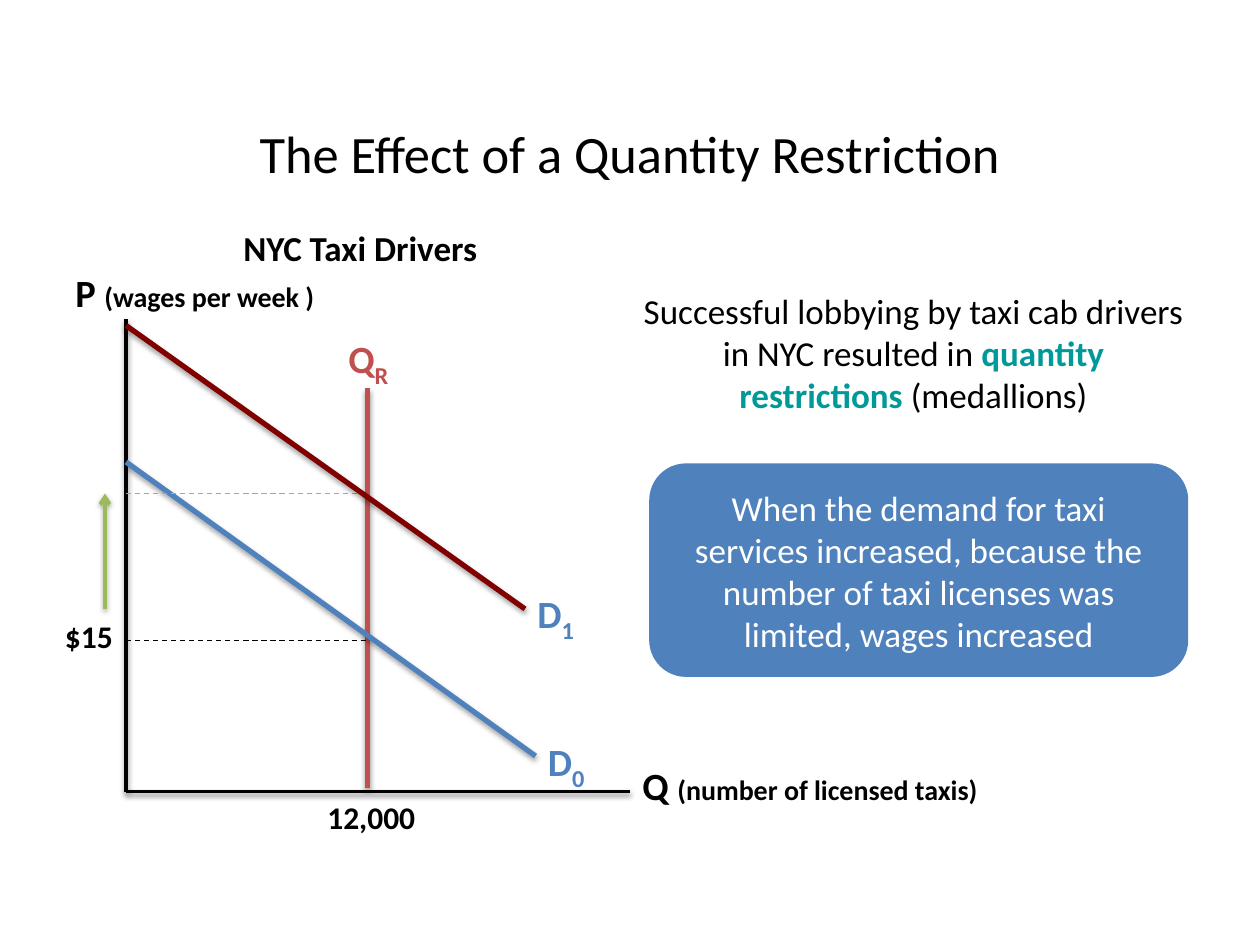
from lxml.etree import SubElement
from pptx import Presentation
from pptx.dml.color import RGBColor
from pptx.enum.dml import MSO_LINE
from pptx.enum.shapes import MSO_CONNECTOR, MSO_SHAPE
from pptx.enum.text import MSO_ANCHOR, MSO_AUTO_SIZE, PP_ALIGN
from pptx.oxml.ns import qn
from pptx.util import Inches, Pt

BLACK = RGBColor(0, 0, 0)
WHITE = RGBColor(255, 255, 255)
BLUE = RGBColor(0x4F, 0x81, 0xBD)
RED = RGBColor(0xC0, 0x50, 0x4D)
MAROON = RGBColor(0x80, 0, 0)
GREEN = RGBColor(0x9B, 0xBB, 0x59)
TEAL = RGBColor(0, 0x99, 0x99)

WIDE, HIGH = Inches(10), Inches(7.5)
COLS, ROWS = 120, 90
LEFT, BASE, LIMIT = 12, 75.4, 35
WAGE, RAISED = 61, 47


class Graph:
    """Draws text, boxes and lines on a slide grid of 120 by 90 cells."""

    font = "Calibri"

    def __init__(self, deck):
        self.slide = deck.slides.add_slide(deck.slide_layouts[6])
        self.shapes = self.slide.shapes

    def place(self, *cells):
        steps = (WIDE / COLS, HIGH / ROWS)
        return [round(cell * steps[i % 2]) for i, cell in enumerate(cells)]

    def fill_text(self, frame, parts, align, anchor):
        frame.word_wrap = True
        frame.vertical_anchor = anchor
        para = frame.paragraphs[0]
        para.alignment = align
        for text, size, color, bold, *base in parts:
            run = para.add_run()
            run.text = text
            font = run.font
            font.name, font.size, font.bold = self.font, Pt(size), bold
            font.color.rgb = color
            if base:
                run._r.get_or_add_rPr().set("baseline", str(base[0] * 1000))

    def text(self, cells, *parts, align=PP_ALIGN.LEFT, anchor=MSO_ANCHOR.TOP):
        frame = self.shapes.add_textbox(*self.place(*cells)).text_frame
        self.fill_text(frame, parts, align, anchor)
        if anchor == MSO_ANCHOR.TOP:
            frame.auto_size = MSO_AUTO_SIZE.SHAPE_TO_FIT_TEXT

    def label(self, cells, name, sub, color):
        self.text(cells, (name, 22, color, True), (sub, 24, color, True, -25))

    def axis(self, cells, name, unit):
        self.text(cells, (name, 22, BLACK, True), (unit, 16, BLACK, True))

    def box(self, cells, part, fill):
        shape = self.shapes.add_shape(
            MSO_SHAPE.ROUNDED_RECTANGLE, *self.place(*cells))
        shape.shadow.inherit = False
        shape.fill.solid()
        shape.fill.fore_color.rgb = fill
        shape.line.color.rgb = fill
        shape.line.width = Pt(2)
        self.fill_text(
            shape.text_frame, [part], PP_ALIGN.CENTER, MSO_ANCHOR.MIDDLE)

    def line(self, ends, color, width, shade=True, arrow=False):
        link = self.shapes.add_connector(
            MSO_CONNECTOR.STRAIGHT, *self.place(*ends))
        link.line.color.rgb = color
        link.line.width = Pt(width)
        if arrow:
            SubElement(link.line._get_or_add_ln(), qn("a:tailEnd"), type="arrow")
        effect = SubElement(link._element.spPr, qn("a:effectLst"))
        if shade:
            shadow = SubElement(
                effect, qn("a:outerShdw"), blurRad=str(Pt(3.1)),
                dist=str(Pt(1.6)), dir="5400000", rotWithShape="0")
            tint = SubElement(shadow, qn("a:srgbClr"), val=str(BLACK))
            SubElement(tint, qn("a:alpha"), val="38000")
        return link

    def guide(self, row, color):
        link = self.line((LEFT, row, LIMIT, row), color, 0.75, shade=False)
        link.line.dash_style = MSO_LINE.DASH


def main():
    deck = Presentation()
    deck.slide_width, deck.slide_height = WIDE, HIGH
    graph = Graph(deck)
    center = PP_ALIGN.CENTER
    graph.text((3, 10, 114, 9),
               ("The Effect of a Quantity Restriction", 30, BLACK, False),
               align=center, anchor=MSO_ANCHOR.MIDDLE)
    graph.line((LEFT, 30.4, LEFT, BASE), BLACK, 2)
    graph.line((LEFT, BASE, 60, BASE), BLACK, 2)
    graph.line((LIMIT, 75, LIMIT, 37), RED, 3)
    graph.line((LEFT, 44, 51, 72), BLUE, 3)
    graph.label((32, 31, 10, 5.6), "Q", "R", RED)
    graph.label((51, 69.4, 10, 5.6), "D", "0", BLUE)
    graph.text((30, BASE, 12, 4.8), ("12,000", 18, BLACK, True))
    graph.box((62, 44.3, 51, 20),
              ("When the demand for taxi services increased, because the "
               "number of taxi licenses was limited, wages increased",
               20, WHITE, False), BLUE)
    graph.text((60, 27, 54, 13.3),
               ("Successful lobbying by taxi cab drivers in NYC resulted in ",
                20, BLACK, False),
               ("quantity restrictions ", 20, TEAL, True),
               ("(medallions)", 20, BLACK, False), align=center)
    graph.guide(RAISED, GREEN)
    graph.guide(WAGE, BLACK)
    graph.line((10, 58, 10, RAISED), GREEN, 2, arrow=True)
    graph.text((22, 21, 31, 5.3), ("NYC Taxi Drivers", 20, BLACK, True))
    graph.text((5, 58.2, 8, 4.8), ("$15", 18, BLACK, True))
    graph.axis((6, 25, 29, 5.6), "P ", "(wages per week )")
    graph.axis((60, 72, 40, 5.6), "Q ", "(number of licensed taxis)")
    graph.line((LEFT, 31, 50, 58), MAROON, 3)
    graph.label((50, 55.3, 10, 5.6), "D", "1", BLUE)
    deck.save("out.pptx")


if __name__ == "__main__":
    main()
